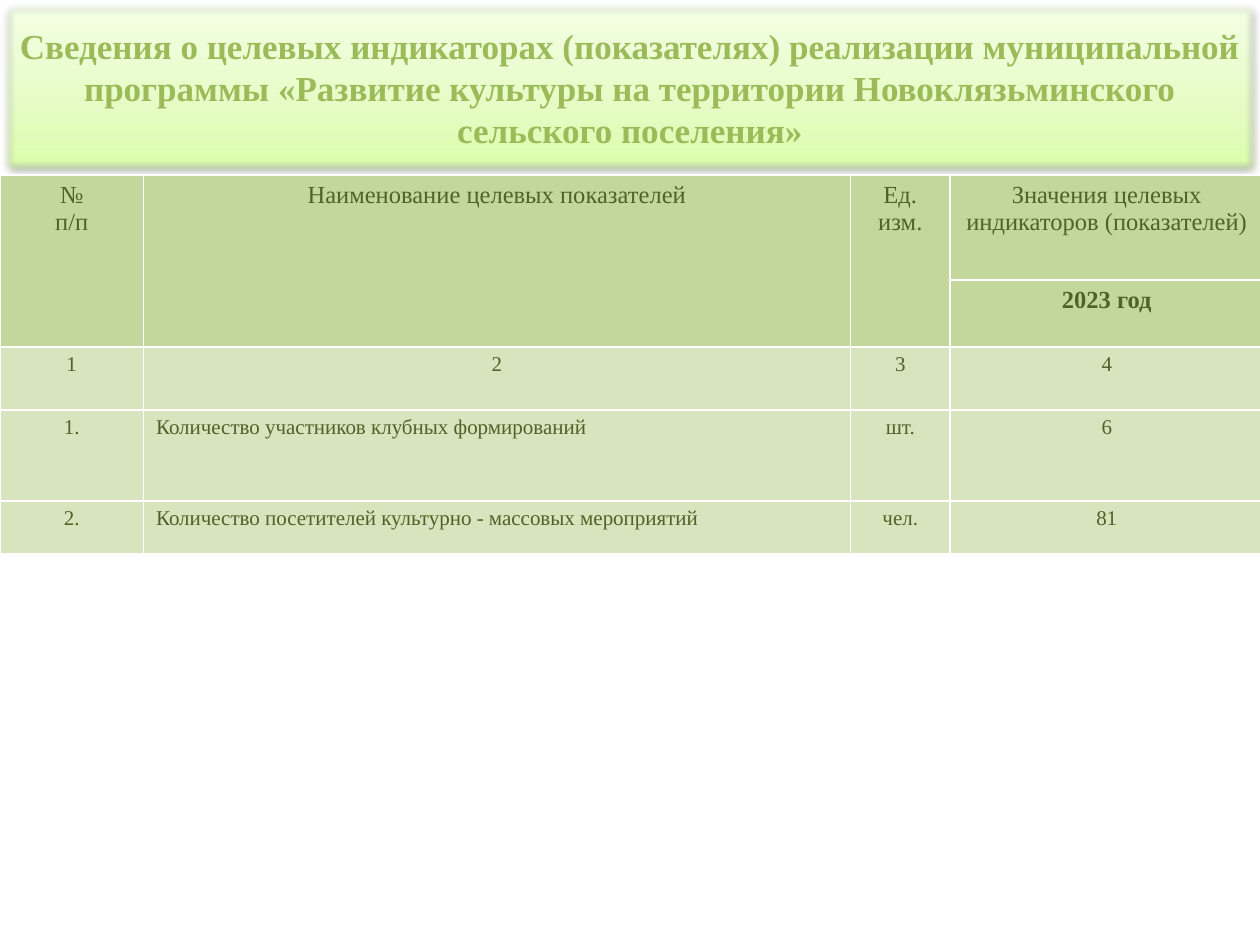
from copy import deepcopy
from dataclasses import dataclass

from lxml import etree
from pptx import Presentation
from pptx.dml.color import RGBColor
from pptx.enum import shapes, text
from pptx.oxml import parse_xml
from pptx.oxml.ns import nsdecls, qn
from pptx.util import Pt

FONT = "Times New Roman"
WHITE = RGBColor(0xFF, 0xFF, 0xFF)
TITLE_GREEN = RGBColor(0x9B, 0xBB, 0x59)
EDGE_GREEN = RGBColor(0x98, 0xB9, 0x55)
TEXT_GREEN = RGBColor(0x4F, 0x62, 0x28)
HEADER_FILL = RGBColor(0xC3, 0xD6, 0x9B)
BODY_FILL = RGBColor(0xD7, 0xE4, 0xBD)
TITLE_STOPS = [
    (0, RGBColor(0xDA, 0xFD, 0xA7)),
    (0.35, RGBColor(0xE4, 0xFC, 0xC2)),
    (1, RGBColor(0xF5, 0xFF, 0xE7)),
]
TITLE = (
    "Сведения о целевых индикаторах (показателях) реализации муниципальной "
    "программы «Развитие культуры на территории Новоклязьминского сельского поселения»"
)
TITLE_HEIGHT = 100
COLUMN_WIDTHS = [82, 404, 57, 179]
ROW_HEIGHTS = [60, 38, 36, 52, 30]
HEADER_ROWS = 2
NAME_COLUMN = 1


@dataclass
class TextStyle:
    size: float
    color: RGBColor
    bold: bool = False
    align: text.PP_ALIGN = text.PP_ALIGN.CENTER


HEADER = TextStyle(14, TEXT_GREEN)
YEAR = TextStyle(14, TEXT_GREEN, bold=True)
BODY = TextStyle(12, TEXT_GREEN)
NAME = TextStyle(12, TEXT_GREEN, align=text.PP_ALIGN.LEFT)

HEADINGS = [
    ["№", "п/п"],
    ["Наименование целевых показателей"],
    ["Ед. изм."],
    ["Значения целевых индикаторов (показателей)"],
]
INDICATORS = [
    ["1", "2", "3", "4"],
    ["1.", "Количество участников клубных формирований", "шт.", "6"],
    ["2.", "Количество посетителей культурно - массовых мероприятий", "чел.", "81"],
]


def write(frame, lines: list[str], style: TextStyle) -> None:
    for index, line in enumerate(lines):
        para = frame.add_paragraph() if index else frame.paragraphs[0]
        para.alignment = style.align
        span = para.add_run()
        span.text = line
        span.font.name = FONT
        span.font.size = Pt(style.size)
        span.font.bold = style.bold
        span.font.color.rgb = style.color


def soften(box) -> None:
    """Give the box a drop shadow and soft edges."""
    box.shadow.inherit = False
    effects = box.element.spPr.find(qn("a:effectLst"))
    effects.append(parse_xml(
        f'<a:outerShdw {nsdecls("a")} blurRad="{Pt(3.1)}" dist="{Pt(1.6)}" '
        'dir="5400000" rotWithShape="0"><a:srgbClr val="000000">'
        '<a:alpha val="38000"/></a:srgbClr></a:outerShdw>'
    ))
    etree.SubElement(effects, qn("a:softEdge"), rad=str(Pt(5)))


def add_title(page) -> None:
    box = page.shapes.add_shape(
        shapes.MSO_SHAPE.RECTANGLE, 0, 0, Pt(720), Pt(TITLE_HEIGHT)
    )
    box.fill.gradient()
    box.fill.gradient_angle = 90
    stop_list = box.element.spPr.find(qn("a:gradFill")).find(qn("a:gsLst"))
    stop_list.append(deepcopy(stop_list[0]))
    for stop, (position, color) in zip(box.fill.gradient_stops, TITLE_STOPS):
        stop.position = position
        stop.color.rgb = color
    box.line.color.rgb = EDGE_GREEN
    box.line.width = Pt(0.75)
    soften(box)
    frame = box.text_frame
    frame.word_wrap = True
    frame.vertical_anchor = text.MSO_ANCHOR.MIDDLE
    write(frame, [TITLE], TextStyle(20, TITLE_GREEN, bold=True))


def style_cell(cell, color: RGBColor) -> None:
    """Outline the cell in white and fill it."""
    properties = cell._tc.get_or_add_tcPr()
    for side in ("lnL", "lnR", "lnT", "lnB"):
        properties.append(parse_xml(
            f'<a:{side} {nsdecls("a")} w="{Pt(1)}"><a:solidFill>'
            f'<a:srgbClr val="{WHITE}"/></a:solidFill></a:{side}>'
        ))
    cell.fill.solid()
    cell.fill.fore_color.rgb = color


def add_indicator_table(page) -> None:
    table = page.shapes.add_table(
        len(ROW_HEIGHTS), len(COLUMN_WIDTHS), 0, Pt(TITLE_HEIGHT),
        Pt(sum(COLUMN_WIDTHS)), Pt(sum(ROW_HEIGHTS)),
    ).table
    for column, width in zip(table.columns, COLUMN_WIDTHS):
        column.width = Pt(width)
    for index, height in enumerate(ROW_HEIGHTS):
        table.rows[index].height = Pt(height)
        for cell in table.rows[index].cells:
            style_cell(cell, HEADER_FILL if index < HEADER_ROWS else BODY_FILL)

    last = len(COLUMN_WIDTHS) - 1
    for column, lines in enumerate(HEADINGS):
        if column < last:
            table.cell(0, column).merge(table.cell(1, column))
        write(table.cell(0, column).text_frame, lines, HEADER)
    write(table.cell(1, last).text_frame, ["2023 год"], YEAR)

    for row, values in enumerate(INDICATORS, HEADER_ROWS):
        for column, value in enumerate(values):
            is_name = column == NAME_COLUMN and row > HEADER_ROWS
            write(table.cell(row, column).text_frame, [value], NAME if is_name else BODY)


def main() -> None:
    deck = Presentation()
    deck.slide_width, deck.slide_height = Pt(720), Pt(540)
    page = deck.slides.add_slide(deck.slide_layouts[6])
    add_title(page)
    add_indicator_table(page)
    deck.save("out.pptx")


if __name__ == "__main__":
    main()
